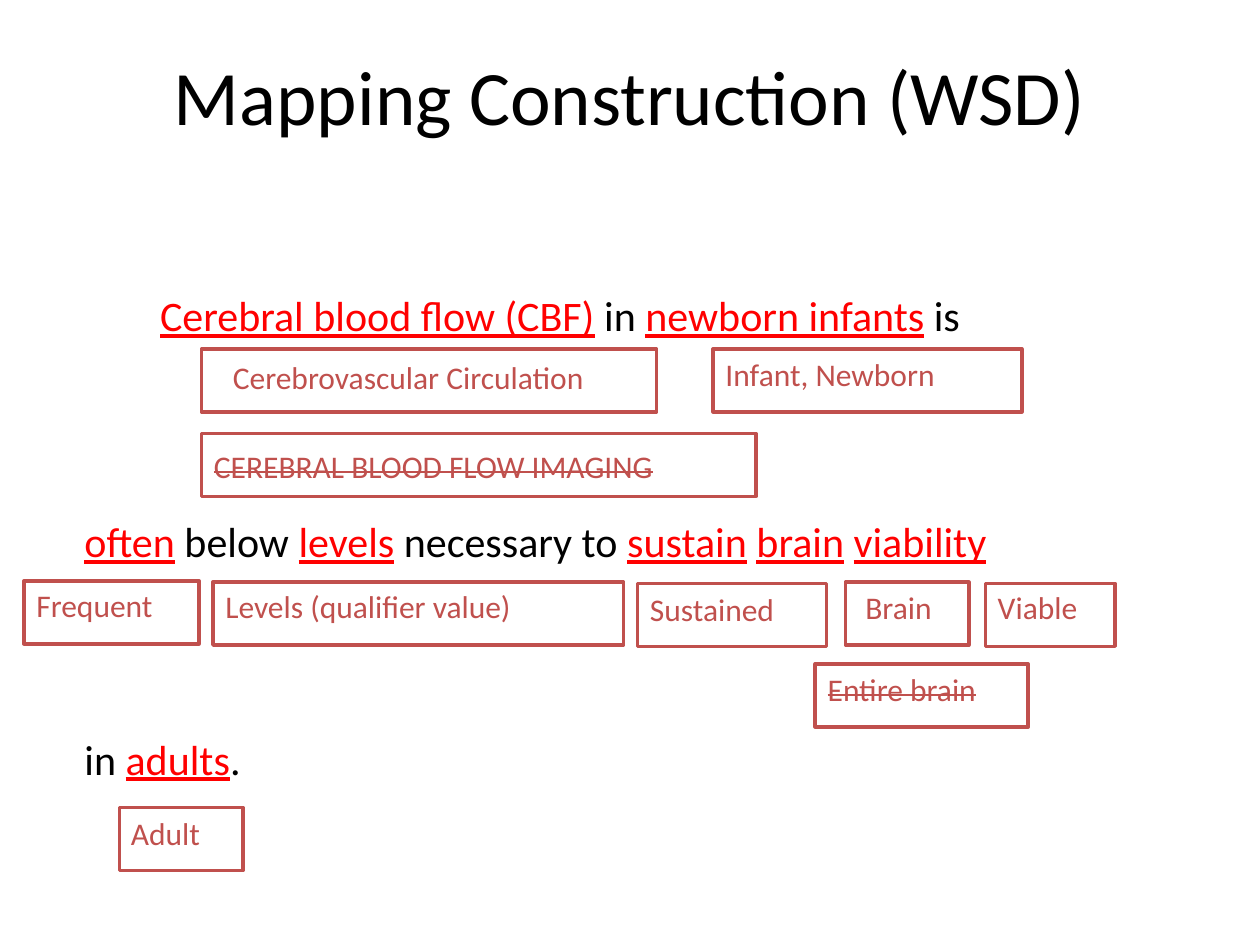
from pptx import Presentation
from pptx.dml.color import RGBColor
from pptx.enum.shapes import MSO_SHAPE
from pptx.enum.text import MSO_ANCHOR, MSO_AUTO_SIZE, PP_ALIGN
from pptx.oxml.ns import qn
from pptx.util import Inches, Pt

FONT = "Calibri"
BLACK, RED, BRICK = "000000", "FF0000", "C0504D"

# Sentence lines: left indent (inches), space before (points),
# and pieces of text marked True where a term is mapped to a concept
SENTENCE = [
    (0.98, 0, [("Cerebral blood flow (CBF)", True), (" in ", False),
               ("newborn infants", True), (" is", False)]),
    (0.38, 100.4, [("often", True), (" below ", False), ("levels", True),
                   (" necessary to ", False), ("sustain", True), (" ", False),
                   ("brain", True), (" ", False), ("viability", True)]),
    (0.38, 95.3, [("in ", False), ("adults", True), (".", False)]),
]

# Concept groups: text, text box (left, top, width, height),
# frame (left, top, width), rejected candidate
CONCEPT_GROUPS = [
    [
        ("Cerebrovascular Circulation", (1.75, 2.79, 3.3, 0.4), (1.6, 2.77, 3.61), False),
        ("CEREBRAL BLOOD FLOW IMAGING", (1.6, 3.5, 4.77, 0.4), (1.6, 3.44, 4.4), True),
        ("Adult", (0.94, 6.41, 1, 0.5), (0.95, 6.41, 0.98), False),
        ("Infant, Newborn", (5.66, 2.77, 2.5, 0.5), (5.66, 2.77, 2.45), False),
        ("Frequent", (0.19, 4.6, 1.42, 0.5), (0.19, 4.61, 1.39), False),
        ("Levels (qualifier value)", (1.69, 4.61, 3.33, 0.5), (1.69, 4.62, 3.26), False),
        ("Brain", (6.77, 4.62, 1, 0.5), (6.71, 4.62, 0.98), False),
        ("Viable", (7.82, 4.62, 1.11, 0.5), (7.82, 4.63, 1.03), False),
        ("Entire brain", (6.47, 5.27, 1.69, 0.4), (6.47, 5.27, 1.69), True),
    ],
    [("Sustained", (5.06, 4.63, 1.6, 0.5), (5.06, 4.63, 1.5), False)],
]
FRAME_HEIGHT = 0.5


def color(hex_value):
    return RGBColor.from_string(hex_value)


def set_attributes(target, values):
    for name, value in values.items():
        setattr(target, name, value)


def place(shape, left, top, width, height):
    set_attributes(shape, {"left": Inches(left), "top": Inches(top),
                           "width": Inches(width), "height": Inches(height)})


def add_run(paragraph, text, size, hex_color, underline=None):
    run = paragraph.add_run()
    run.text = text
    set_attributes(run.font, {"name": FONT, "size": Pt(size), "underline": underline})
    run.font.color.rgb = color(hex_color)
    return run


def fill_title(title):
    place(title, 0.5, 0.13, 9, 1.25)
    title.text_frame.vertical_anchor = MSO_ANCHOR.MIDDLE
    paragraph = title.text_frame.paragraphs[0]
    paragraph.alignment = PP_ALIGN.CENTER
    add_run(paragraph, "Mapping Construction (WSD)", 44, BLACK)


def fill_sentence(body):
    place(body, 0.19, 1.77, 9.64, 5.17)
    frame = body.text_frame
    set_attributes(frame, {"auto_size": MSO_AUTO_SIZE.NONE, "word_wrap": True,
                           "margin_top": Inches(0.53)})
    for index, (indent, space, pieces) in enumerate(SENTENCE):
        paragraph = frame.add_paragraph() if index else frame.paragraphs[0]
        paragraph.space_before = Pt(space)
        # No bullet, plain left indent
        properties = paragraph._p.get_or_add_pPr()
        properties.set("marL", str(Inches(indent)))
        properties.set("indent", "0")
        properties.append(properties.makeelement(qn("a:buNone"), {}))
        for text, mapped in pieces:
            add_run(paragraph, text, 24, RED if mapped else BLACK, mapped)


def add_concept(group, text, text_box, frame, rejected):
    # Label
    label = group.shapes.add_textbox(*map(Inches, text_box))
    set_attributes(label.text_frame, {"word_wrap": True,
                                      "auto_size": MSO_AUTO_SIZE.SHAPE_TO_FIT_TEXT})
    run = add_run(label.text_frame.paragraphs[0], text, 18, BRICK)
    if rejected:
        run._r.get_or_add_rPr().set("strike", "sngStrike")
    # Outline
    outline = group.shapes.add_shape(MSO_SHAPE.RECTANGLE,
                                     *map(Inches, (*frame, FRAME_HEIGHT)))
    outline.shadow.inherit = False
    outline.fill.background()
    outline.line.color.rgb = color(BRICK)
    outline.line.width = Pt(2)


def main():
    presentation = Presentation()
    set_attributes(presentation, {"slide_width": Inches(10), "slide_height": Inches(7.5)})
    slide = presentation.slides.add_slide(presentation.slide_layouts[1])
    fill_title(slide.shapes.title)
    fill_sentence(slide.placeholders[1])
    for concepts in CONCEPT_GROUPS:
        group = slide.shapes.add_group_shape()
        for concept in concepts:
            add_concept(group, *concept)
    presentation.save("out.pptx")


if __name__ == "__main__":
    main()
